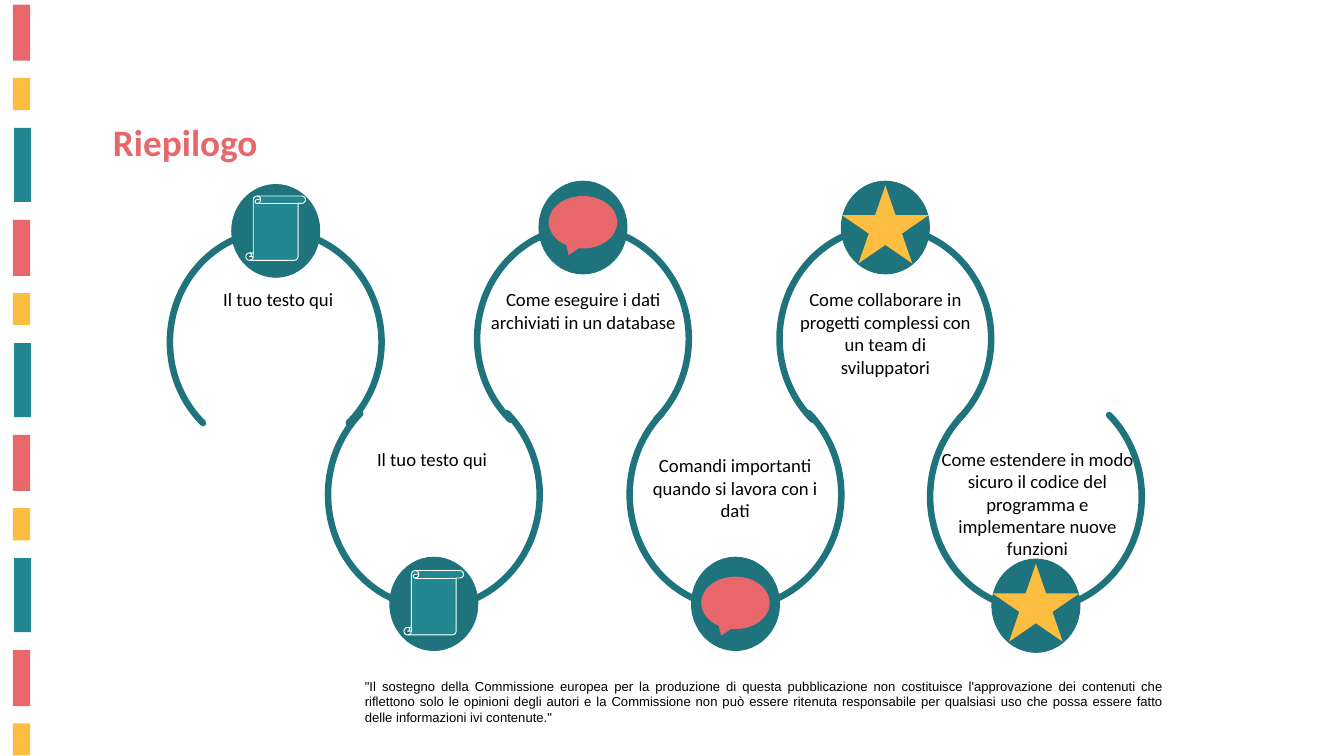
from lxml import etree
from pptx import Presentation
from pptx import util as u
from pptx.dml import color
from pptx.enum import shapes, text
from pptx.oxml import ns

TEAL, DARK_TEAL, CORAL, YELLOW = "238791", "1E737C", "E8676A", "FDBD40"
BLACK, WHITE = "000000", "FFFFFF"
KIND = shapes.MSO_SHAPE

TITLE = "Riepilogo"
DISCLAIMER = (
    "\"Il sostegno della Commissione europea per la produzione di questa pubblicazione "
    "non costituisce l'approvazione dei contenuti che riflettono solo le opinioni degli "
    "autori e la Commissione non può essere ritenuta responsabile per qualsiasi uso che "
    "possa essere fatto delle informazioni ivi contenute.\""
)

STRIPES = [
    (CORAL, 13.7, 5, 18.7, 60),
    (YELLOW, 13.7, 83.5, 18.7, 34.4),
    (TEAL, 15.1, 137, 18, 79.4),
]
STRIPE_PERIOD = 230.5

ICONS = {
    "scroll": dict(kind=KIND.VERTICAL_SCROLL, size=(64, 69), fill=TEAL, line=WHITE),
    "speech": dict(kind=KIND.OVAL_CALLOUT, size=(73.4, 56.2), fill=CORAL),
    "star": dict(kind=KIND.STAR_5_POINT, size=(93, 83.5), fill=YELLOW),
}

STEPS = [
    dict(words="Il tuo testo qui", arc=(182, 247), upper=True,
         icon="scroll", icon_top=210, area=(193.7, 305.3, 208.8, 32)),
    dict(words="Il tuo testo qui", arc=(351.4, 409), upper=False,
         icon="scroll", icon_top=611.3, area=(352, 476, 221.8, 32)),
    dict(words="Come eseguire i dati archiviati in un database", arc=(511.2, 243.4), upper=True,
         icon="speech", icon_top=210, area=(514, 305.3, 221.8, 55.4)),
    dict(words="Comandi importanti quando si lavora con i dati", arc=(674.6, 409), upper=False,
         icon="speech", icon_top=617.8, area=(683.3, 483, 208.8, 80)),
    dict(words="Come collaborare in progetti complessi con un team di sviluppatori",
         arc=(835.2, 243.4), upper=True,
         icon="star", icon_top=198.7, area=(849.6, 305.3, 198, 104.4)),
    dict(words="Come estendere in modo sicuro il codice del programma e implementare nuove funzioni",
         arc=(996.5, 411), upper=False,
         icon="star", icon_top=604, area=(1000, 476, 223.2, 128)),
]
ARC_WIDTH, CIRCLE_WIDTH = 226.8, 94.3
ARC_ANGLES = (79.141, 28.684)


def rgb(code):
    return color.RGBColor.from_string(code)


def place(item, left, top, width, height):
    item.left, item.top = u.Pt(left), u.Pt(top)
    item.width, item.height = u.Pt(width), u.Pt(height)


def add_shape(slide, kind, area, fill=None, line=None, weight=1):
    shape = slide.shapes.add_shape(kind, *map(u.Pt, area))
    shape.shadow.inherit = False
    if fill:
        shape.fill.solid()
        shape.fill.fore_color.rgb = rgb(fill)
    else:
        shape.fill.background()
    if line:
        shape.line.color.rgb = rgb(line)
        shape.line.width = u.Pt(weight)
    else:
        shape.line.fill.background()
    return shape


def write(box, words, size=20, font="Calibri", ink=BLACK, bold=False,
          align=text.PP_ALIGN.CENTER):
    frame = box.text_frame
    frame.word_wrap = True
    frame.auto_size = text.MSO_AUTO_SIZE.NONE
    frame.vertical_anchor = text.MSO_ANCHOR.TOP
    para = frame.paragraphs[0]
    para.alignment = align
    span = para.add_run()
    span.text = words
    span.font.size = u.Pt(size)
    span.font.name = font
    span.font.bold = bold
    span.font.color.rgb = rgb(ink)


def add_text(slide, area, words, **style):
    write(slide.shapes.add_textbox(*map(u.Pt, area)), words, **style)


def add_ring(slide, step):
    left, top = step["arc"]
    upper = step["upper"]
    arc_height = 239 if upper else 242
    arc = add_shape(slide, KIND.ARC, (left, top, ARC_WIDTH, arc_height),
                    line=DARK_TEAL, weight=7)
    for index, angle in enumerate(ARC_ANGLES):
        arc.adjustments[index] = angle
    arc.rotation = 0 if upper else 180
    outline = arc.element.spPr.find(ns.qn("a:ln"))
    outline.set("cap", "rnd")
    etree.SubElement(outline, ns.qn("a:round"))

    circle_left = left + (ARC_WIDTH - CIRCLE_WIDTH) / 2
    circle_top = top - 49.3 if upper else top + 188
    circle_height = 99.4 if upper else 100
    add_shape(slide, KIND.OVAL, (circle_left, circle_top, CIRCLE_WIDTH, circle_height),
              fill=DARK_TEAL, line=DARK_TEAL)


def add_icon(slide, step):
    icon = ICONS[step["icon"]]
    width, height = icon["size"]
    left = step["arc"][0] + (ARC_WIDTH - width) / 2
    add_shape(slide, icon["kind"], (left, step["icon_top"], width, height),
              fill=icon["fill"], line=icon.get("line"))


def main():
    deck = Presentation()
    deck.slide_width, deck.slide_height = u.Pt(1440), u.Pt(810)
    slide = deck.slides.add_slide(deck.slide_layouts[5])

    for cycle in range(4):
        for fill, left, top, width, height in STRIPES:
            stripe_top = top + cycle * STRIPE_PERIOD
            if stripe_top < 810:
                add_shape(slide, KIND.RECTANGLE, (left, stripe_top, width, height), fill=fill)

    add_text(slide, (383.8, 722.9, 869.8, 58.3), DISCLAIMER, size=14, font="Arial",
             align=text.PP_ALIGN.JUSTIFY)
    title = slide.shapes.title
    place(title, 113.8, 123.8, 473.8, 55.4)
    write(title, TITLE, size=40, ink="E7686A", bold=True, align=text.PP_ALIGN.LEFT)

    for step in STEPS:
        add_ring(slide, step)
    for step in STEPS:
        add_icon(slide, step)
        add_text(slide, step["area"], step["words"])

    deck.save("out.pptx")


if __name__ == "__main__":
    main()
